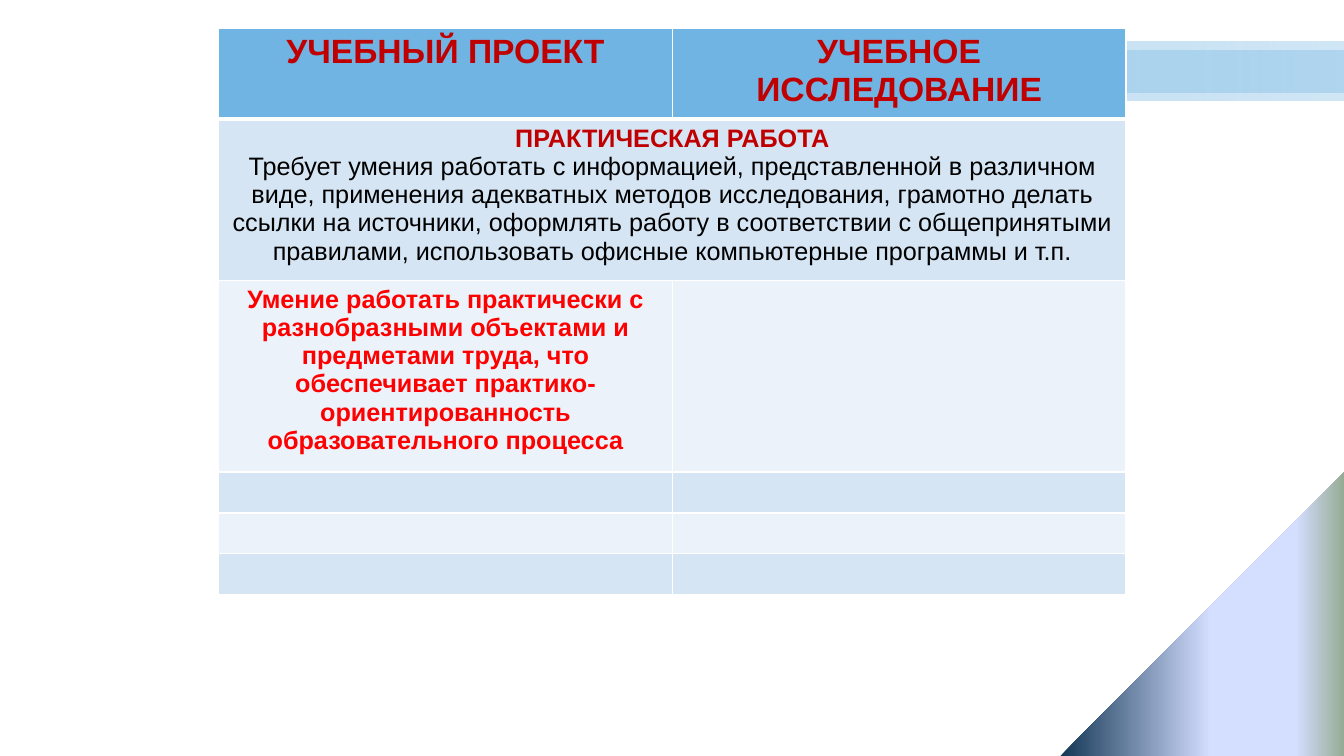
"""Build a slide comparing a learning project with a learning study."""
from typing import NamedTuple

from lxml.etree import SubElement
from pptx import Presentation
from pptx.dml.color import RGBColor
from pptx.enum.shapes import MSO_SHAPE as Preset
from pptx.enum.text import PP_ALIGN as Align
from pptx.oxml.ns import qn
from pptx.slide import Slide
from pptx.table import _Cell as Cell
from pptx.util import Pt

WHITE, BLUE, BLACK = "FFFFFF", "6FB4E3", "000000"
DARK_RED, RED = "C00000", "FF0000"
PALE, PALER = "D5E5F4", "EBF2FA"
COLUMN_WIDTH = 324
ROW_HEIGHTS = (65, 115, 137, 29, 29, 29)


class Stop(NamedTuple):
    position: int
    color: str
    opacity: int = 100


class Decoration(NamedTuple):
    preset: Preset
    left: float
    top: float
    width: float
    height: float
    stops: tuple[Stop, ...]
    angle: int = 0
    rotation: int = 0


class Line(NamedTuple):
    text: str
    size: int
    color: str
    bold: bool = True


BAND_STOPS = (Stop(0, WHITE), Stop(100, BLUE, 32))
CORNER_STOPS = (Stop(0, "143756"), Stop(53, "D4DEFF"), Stop(83, "D4DEFF"), Stop(100, "96AB94"))
DECORATIONS = (
    Decoration(Preset.RECTANGLE, 224, 30, 736, 42, BAND_STOPS),
    Decoration(Preset.RECTANGLE, 208, 36, 752, 30, BAND_STOPS),
    Decoration(Preset.RIGHT_TRIANGLE, 757.5, 337.5, 202.5, 202.5, CORNER_STOPS, 90, 270),
)
CELL_LINES = {
    (0, 0): (Line("УЧЕБНЫЙ ПРОЕКТ", 24, DARK_RED),),
    (0, 1): (Line("УЧЕБНОЕ ИССЛЕДОВАНИЕ", 24, DARK_RED),),
    (1, 0): (
        Line("ПРАКТИЧЕСКАЯ РАБОТА", 18, DARK_RED),
        Line("Требует умения работать с информацией, представленной в различном виде, "
             "применения адекватных методов исследования, грамотно делать ссылки на источники, "
             "оформлять работу в соответствии с общепринятыми правилами, использовать офисные "
             "компьютерные программы и т.п.", 18, BLACK, False),
    ),
    (2, 0): (
        Line("Умение работать практически с разнобразными объектами и предметами труда, "
             "что обеспечивает практико-ориентированность образовательного процесса", 18, RED),
    ),
}


def rgb(color: str) -> RGBColor:
    """Turn a hex string into a colour."""
    return RGBColor.from_string(color)


def add_decoration(slide: Slide, item: Decoration) -> None:
    """Draw one gradient-filled background shape."""
    shape = slide.shapes.add_shape(
        item.preset, Pt(item.left), Pt(item.top), Pt(item.width), Pt(item.height))
    shape.rotation = item.rotation
    shape.shadow.inherit = False
    shape.line.fill.background()
    shape.fill.gradient()
    gradient = shape._element.spPr.find(qn("a:gradFill"))
    gradient.find(qn("a:lin")).set("ang", str(item.angle * 60000))
    stop_list = gradient.find(qn("a:gsLst"))
    for old_stop in list(stop_list):
        stop_list.remove(old_stop)
    for stop in item.stops:
        element = SubElement(stop_list, qn("a:gs"), pos=str(stop.position * 1000))
        color = SubElement(element, qn("a:srgbClr"), val=stop.color)
        if stop.opacity < 100:
            SubElement(color, qn("a:alpha"), val=str(stop.opacity * 1000))


def style_cell(cell: Cell, fill: str, borders: dict[str, int]) -> None:
    """Give a cell white borders and a solid fill."""
    properties = cell._tc.get_or_add_tcPr()
    for side, width in borders.items():
        border = SubElement(properties, qn(f"a:ln{side}"), w=str(Pt(width)))
        SubElement(SubElement(border, qn("a:solidFill")), qn("a:srgbClr"), val=WHITE)
    cell.fill.solid()
    cell.fill.fore_color.rgb = rgb(fill)


def write_lines(cell: Cell, lines: tuple[Line, ...]) -> None:
    """Write centred paragraphs into a cell."""
    for index, line in enumerate(lines):
        frame = cell.text_frame
        paragraph = frame.add_paragraph() if index else frame.paragraphs[0]
        paragraph.alignment = Align.CENTER
        font_format = {"name": "Arial", "size": Pt(line.size), "bold": line.bold}
        run = paragraph.add_run()
        run.text = line.text
        for name, value in font_format.items():
            setattr(run.font, name, value)
        run.font.color.rgb = rgb(line.color)


def add_comparison(slide: Slide) -> None:
    """Add the comparison table."""
    table = slide.shapes.add_table(
        len(ROW_HEIGHTS), 2, Pt(156.25), Pt(20.25),
        Pt(2 * COLUMN_WIDTH), Pt(sum(ROW_HEIGHTS))).table
    for column in table.columns:
        column.width = Pt(COLUMN_WIDTH)
    for row_index, height in enumerate(ROW_HEIGHTS):
        table.rows[row_index].height = Pt(height)
        fill = BLUE if row_index == 0 else PALE if row_index % 2 else PALER
        borders = {"L": 1, "R": 1, "T": 3 if row_index == 1 else 1,
                   "B": 3 if row_index == 0 else 1}
        for column_index in range(2):
            cell = table.cell(row_index, column_index)
            style_cell(cell, fill, borders)
            write_lines(cell, CELL_LINES.get((row_index, column_index), ()))
    table.cell(1, 0).merge(table.cell(1, 1))


def main() -> None:
    """Build and save the presentation."""
    presentation = Presentation()
    presentation.slide_width, presentation.slide_height = Pt(960), Pt(540)
    slide = presentation.slides.add_slide(presentation.slide_layouts[6])
    for item in DECORATIONS:
        add_decoration(slide, item)
    add_comparison(slide)
    presentation.save("out.pptx")


if __name__ == "__main__":
    main()
